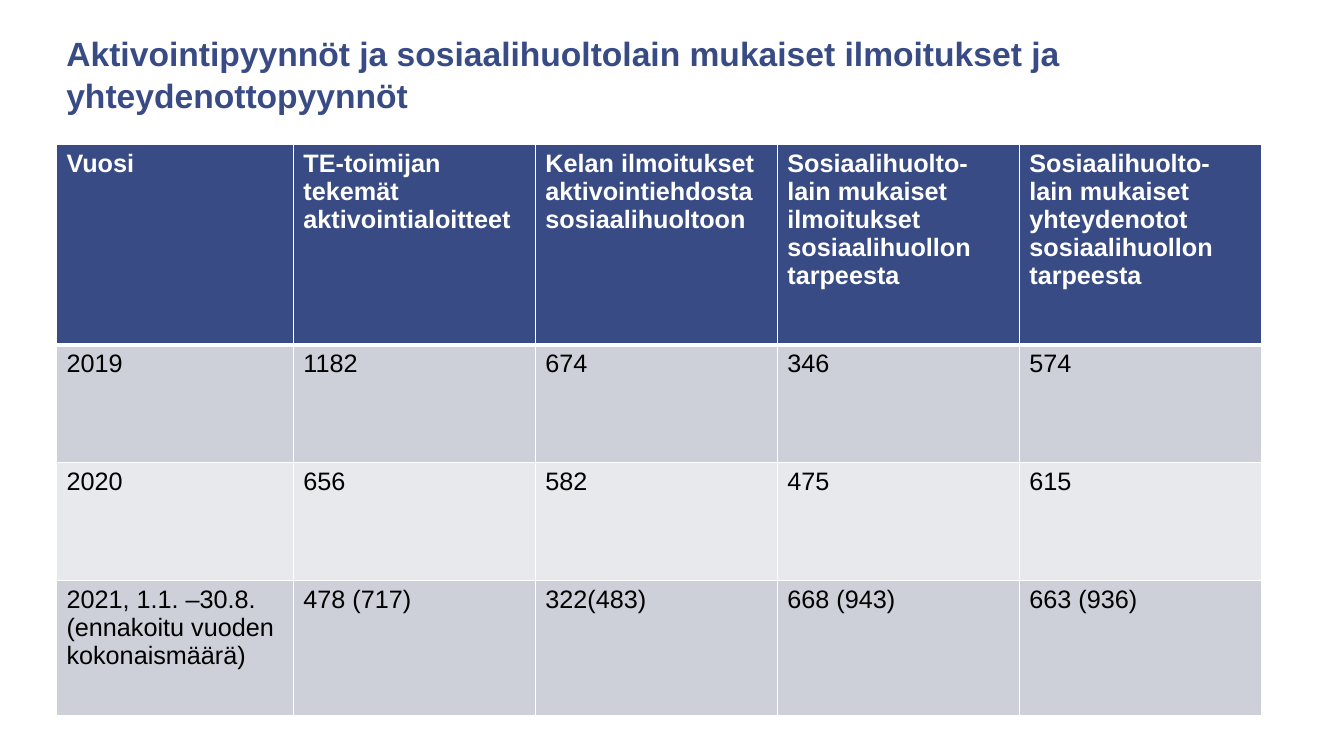
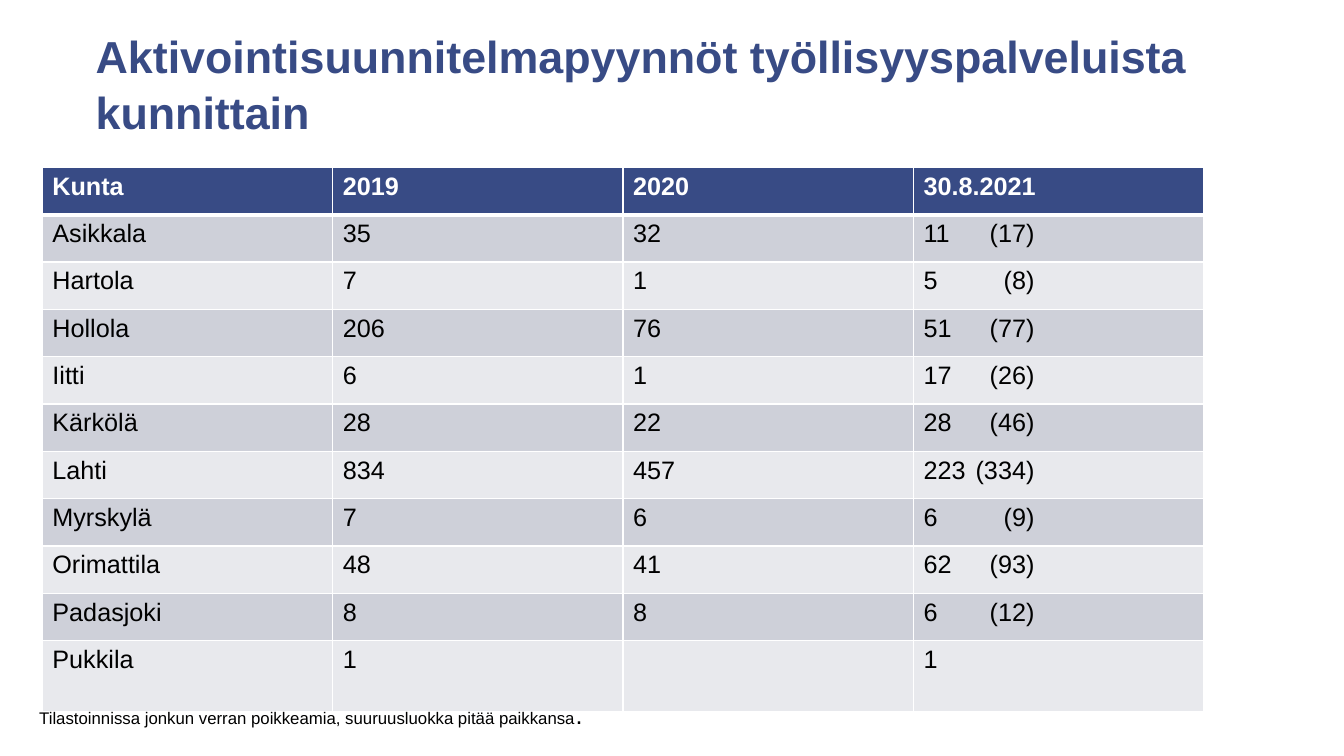
from dataclasses import dataclass

from lxml import etree
from pptx import Presentation
from pptx.dml.color import RGBColor
from pptx.enum.text import MSO_ANCHOR
from pptx.oxml.ns import qn
from pptx.util import Inches, Pt

# Shared style
FONT = "Arial"
NAVY = RGBColor(0x38, 0x4B, 0x85)
BAND_DARK = RGBColor(0xCE, 0xD0, 0xD9)
BAND_LIGHT = RGBColor(0xE8, 0xE9, 0xED)
WHITE = RGBColor(0xFF, 0xFF, 0xFF)
BLACK = RGBColor(0x00, 0x00, 0x00)
MIDDLE = MSO_ANCHOR.MIDDLE
TABLE_SIZE = 18
FORECAST_TAB = Inches(1.1)
BORDER, HEADER_BORDER = Pt(1), Pt(3)


@dataclass
class TableSpec:
    left: float
    top: float
    cols: list[float]
    heights: list[float]
    rows: list[list[str]]


@dataclass
class TitleSpec:
    text: str
    left: float
    top: float
    size: int


# Slide content
REQUESTS_TITLE = TitleSpec(
    "Aktivointipyynnöt ja sosiaalihuoltolain mukaiset ilmoitukset ja "
    "yhteydenottopyynnöt", 0.56, 0.17, 24)
REQUESTS = TableSpec(
    0.56, 1.43, [2.35] + [2.4] * 4, [1.99, 1.17, 1.17, 1.34],
    [
        ["Vuosi",
         "TE-toimijan tekemät aktivointialoitteet",
         "Kelan ilmoitukset aktivointiehdosta sosiaalihuoltoon",
         "Sosiaalihuolto-lain mukaiset ilmoitukset sosiaalihuollon tarpeesta",
         "Sosiaalihuolto-lain mukaiset yhteydenotot sosiaalihuollon tarpeesta"],
        ["2019", "1182", "674", "346", "574"],
        ["2020", "656", "582", "475", "615"],
        ["2021, 1.1. –30.8. (ennakoitu vuoden kokonaismäärä)",
         "478 (717)", "322(483)", "668 (943)", "663 (936)"],
    ])

TOWNS_TITLE = TitleSpec(
    "Aktivointisuunnitelmapyynnöt työllisyyspalveluista kunnittain",
    0.85, 0.26, 32)
TOWNS = TableSpec(
    0.42, 1.66, [2.88] * 4, [0.47] * 10 + [0.7],
    [
        ["Kunta", "2019", "2020", "30.8.2021"],
        ["Asikkala", "35", "32", "11\t(17)"],
        ["Hartola", "7", "1", "5\t(8)"],
        ["Hollola", "206", "76", "51\t(77)"],
        ["Iitti", "6", "1", "17\t(26)"],
        ["Kärkölä", "28", "22", "28\t(46)"],
        ["Lahti", "834", "457", "223\t(334)"],
        ["Myrskylä", "7", "6", "6\t(9)"],
        ["Orimattila", "48", "41", "62\t(93)"],
        ["Padasjoki", "8", "8", "6\t(12)"],
        ["Pukkila", "1", "", "1"],
    ])
NOTE = "Tilastoinnissa jonkun verran poikkeamia, suuruusluokka pitää paikkansa"


def style_run(r, size: int, color: RGBColor, bold: bool = False) -> None:
    r.font.name = FONT
    r.font.size = Pt(size)
    r.font.bold = bold
    r.font.color.rgb = color


def add_text_frame(s, left: float, top: float, width: float, height: float):
    tf = s.shapes.add_textbox(Inches(left), Inches(top),
                              Inches(width), Inches(height)).text_frame
    tf.word_wrap = True
    return tf


def add_title(s, title: TitleSpec) -> None:
    tf = add_text_frame(s, title.left, title.top, 11.5, 1.11)
    tf.vertical_anchor = MIDDLE
    p = tf.paragraphs[0]
    p.text = title.text
    p.line_spacing = 1.05
    style_run(p.runs[0], title.size, NAVY, True)


def set_borders(cell, top: int, bottom: int) -> None:
    tc_pr = cell._tc.get_or_add_tcPr()
    sides = (("L", BORDER), ("R", BORDER), ("T", top), ("B", bottom))
    for i, (side, width) in enumerate(sides):
        ln = etree.Element(qn(f"a:ln{side}"), w=str(width))
        fill = etree.SubElement(ln, qn("a:solidFill"))
        etree.SubElement(fill, qn("a:srgbClr"), val=str(WHITE))
        tc_pr.insert(i, ln)


def add_right_tab(p, pos: int) -> None:
    tabs = etree.SubElement(p._p.get_or_add_pPr(), qn("a:tabLst"))
    etree.SubElement(tabs, qn("a:tab"), pos=str(pos), algn="r")


def fill_cell(cell, text: str, row: int) -> None:
    header = row == 0
    cell.fill.solid()
    cell.fill.fore_color.rgb = (
        NAVY if header else BAND_DARK if row % 2 else BAND_LIGHT)
    set_borders(cell, HEADER_BORDER if row == 1 else BORDER,
                HEADER_BORDER if header else BORDER)
    p = cell.text_frame.paragraphs[0]
    p.text = text
    if "\t" in text:
        add_right_tab(p, FORECAST_TAB)
    for r in p.runs:
        style_run(r, TABLE_SIZE, WHITE if header else BLACK, header)


def add_grid(s, spec: TableSpec) -> None:
    table = s.shapes.add_table(
        len(spec.rows), len(spec.cols), Inches(spec.left), Inches(spec.top),
        Inches(sum(spec.cols)), Inches(sum(spec.heights))).table
    table.horz_banding = False
    for col, width in zip(table.columns, spec.cols):
        col.width = Inches(width)
    for i, (height, texts) in enumerate(zip(spec.heights, spec.rows)):
        table.rows[i].height = Inches(height)
        for j, text in enumerate(texts):
            fill_cell(table.cell(i, j), text, i)


def add_note(s) -> None:
    p = add_text_frame(s, 0.29, 6.89, 5.88, 0.71).paragraphs[0]
    for text, size in ((NOTE, 12), (".", 18)):
        r = p.add_run()
        r.text = text
        style_run(r, size, BLACK)


def main() -> None:
    prs = Presentation()
    prs.slide_width, prs.slide_height = Inches(13.33), Inches(7.5)
    blank = prs.slide_layouts[6]

    # Requests and notices by year
    s = prs.slides.add_slide(blank)
    add_title(s, REQUESTS_TITLE)
    add_grid(s, REQUESTS)

    # Requests by municipality
    s = prs.slides.add_slide(blank)
    add_grid(s, TOWNS)
    add_title(s, TOWNS_TITLE)
    add_note(s)

    prs.save("out.pptx")


if __name__ == "__main__":
    main()
